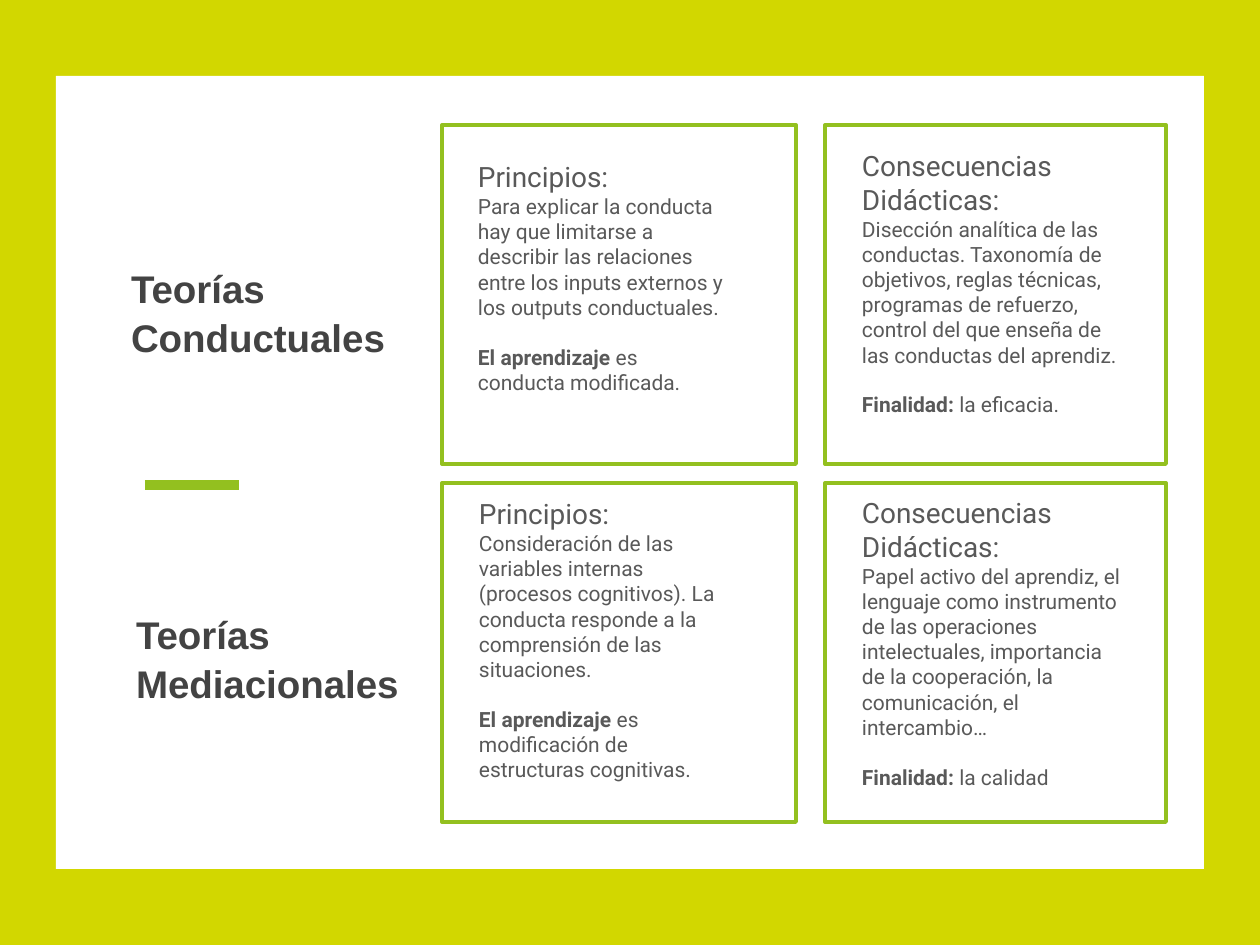
from dataclasses import dataclass

from lxml.etree import SubElement
from pptx import Presentation
from pptx.dml.color import RGBColor as Color
from pptx.enum.shapes import MSO_CONNECTOR as Connector, MSO_SHAPE as Shape
from pptx.enum.text import MSO_ANCHOR as Anchor, MSO_AUTO_SIZE as Fit, PP_ALIGN as Align
from pptx.oxml.ns import qn
from pptx.util import Pt


@dataclass(frozen=True)
class Theme:
    lime: Color = Color.from_string("D2D700")
    green: Color = Color.from_string("93C01F")
    white: Color = Color.from_string("FFFFFF")
    heading_ink: Color = Color.from_string("434343")
    body_ink: Color = Color.from_string("595959")
    heading_font: str = "Arial"
    body_font: str = "Roboto"
    title_size: int = 22
    label_size: int = 16
    body_size: int = 12


theme = Theme()
scale = 914400 / 126


def px(*lengths):
    return [round(length * scale) for length in lengths]


def write(box, paragraphs, color, font, anchor=Anchor.TOP, spacing=1.0, gap=0):
    frame = box.text_frame
    frame.word_wrap = True
    frame.auto_size = Fit.NONE
    frame.vertical_anchor = anchor
    frame.margin_left = frame.margin_right = frame.margin_top = frame.margin_bottom = px(13)[0]
    for index, spans in enumerate(paragraphs):
        para = frame.add_paragraph() if index else frame.paragraphs[0]
        para.alignment = Align.LEFT
        para.line_spacing = spacing
        para.space_before = Pt(gap if index else 0)
        for position, (text, size, bold) in enumerate(spans):
            if position and size != spans[position - 1][1]:
                para.add_line_break()
            span = para.add_run()
            span.text = text
            span.font.size = Pt(size)
            span.font.bold = bold
            span.font.name = font
            span.font.color.rgb = color


deck = Presentation()
deck.slide_width, deck.slide_height = px(1260, 945)
page = deck.slides.add_slide(deck.slide_layouts[5])
page.background.fill.solid()
page.background.fill.fore_color.rgb = theme.lime

panel = page.shapes.add_shape(Shape.RECTANGLE, *px(56, 76, 1148, 793))
panel.shadow.inherit = False
panel.fill.solid()
panel.fill.fore_color.rgb = theme.white
panel.line.fill.background()

divider = page.shapes.add_connector(Connector.STRAIGHT, *px(145, 485, 239, 485))
divider.line.color.rgb = theme.green
divider.line.width = Pt(6)
SubElement(divider.element.spPr, qn("a:effectLst"))

for top in (125, 483):
    for left, width in ((442, 354), (825, 341)):
        card = page.shapes.add_shape(Shape.RECTANGLE, *px(left, top, width, 339))
        card.shadow.inherit = False
        card.fill.background()
        card.line.color.rgb = theme.green
        card.line.width = Pt(2.25)

card_texts = [
    (465, 147, 278, "Principios:",
     "Para explicar la conducta hay que limitarse a describir las relaciones entre los inputs externos y los outputs conductuales.",
     "El aprendizaje ", "es conducta modificada."),
    (849, 136, 289, "Consecuencias Didácticas:",
     "Disección analítica de las conductas. Taxonomía de objetivos, reglas técnicas, programas de refuerzo, control del que enseña de las conductas del aprendiz.",
     "Finalidad: ", "la eficacia."),
    (466, 484, 276, "Principios:",
     "Consideración de las variables internas (procesos cognitivos). La conducta responde a la comprensión de las situaciones.",
     "El aprendizaje ", "es modificación de estructuras cognitivas."),
    (849, 483, 289, "Consecuencias Didácticas:",
     "Papel activo del aprendiz, el lenguaje como instrumento de las operaciones intelectuales, importancia de la cooperación, la comunicación, el intercambio…",
     "Finalidad: ", "la calidad"),
]
for left, top, width, label, body, key, detail in card_texts:
    box = page.shapes.add_textbox(*px(left, top, width, 209))
    paragraphs = [
        [(label, theme.label_size, False), (body, theme.body_size, False)],
        [(key, theme.body_size, True), (detail, theme.body_size, False)],
    ]
    write(box, paragraphs, theme.body_ink, theme.body_font, gap=14)

title = page.shapes.title
title.left, title.top, title.width, title.height = px(118, 239, 310, 145)
title.element.getparent().append(title.element)
second_heading = page.shapes.add_textbox(*px(123, 585, 310, 145))
for box, text in ((title, "Teorías Conductuales"), (second_heading, "Teorías Mediacionales")):
    write(box, [[(text, theme.title_size, True)]], theme.heading_ink, theme.heading_font,
          anchor=Anchor.MIDDLE, spacing=1.05)

deck.save("out.pptx")
